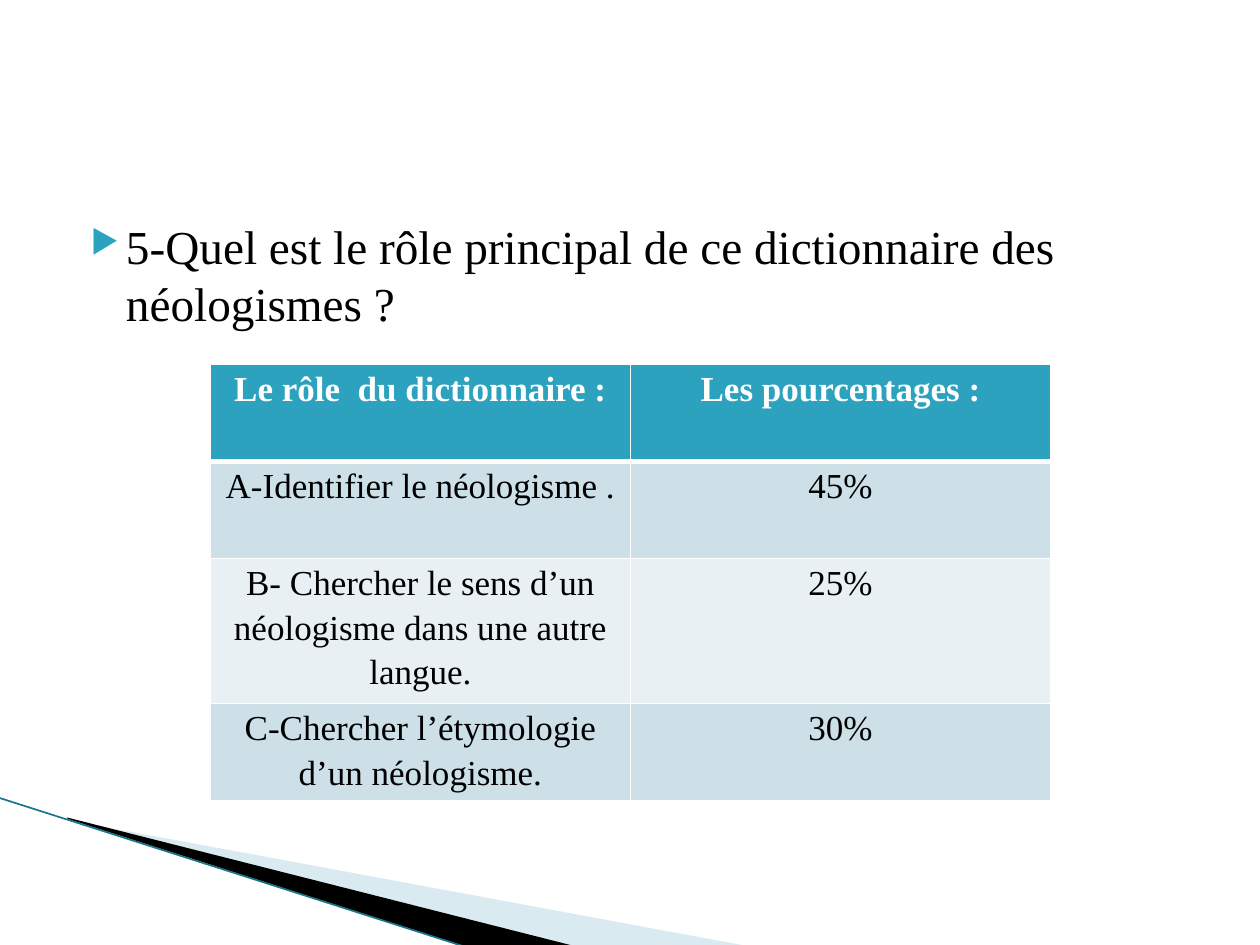
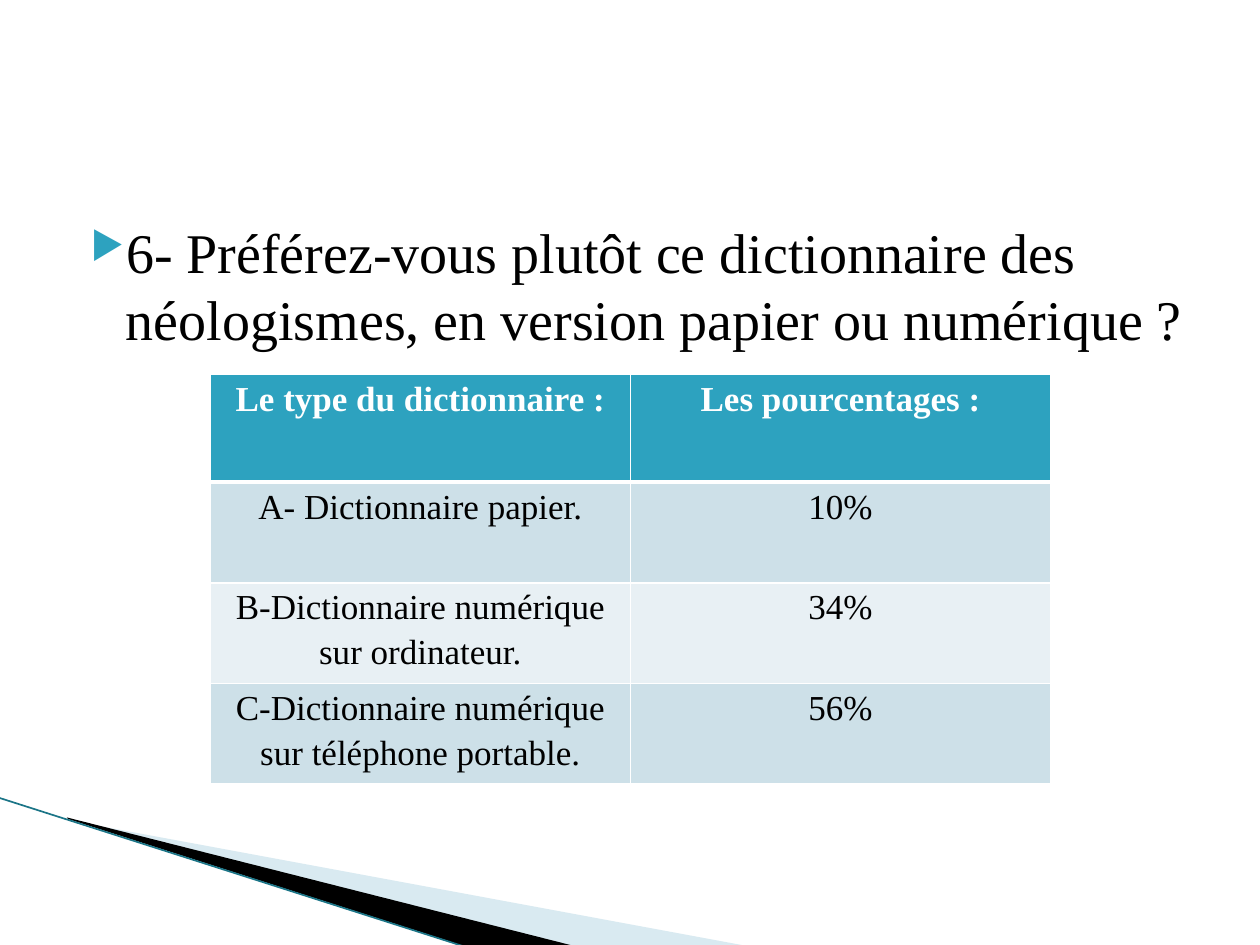
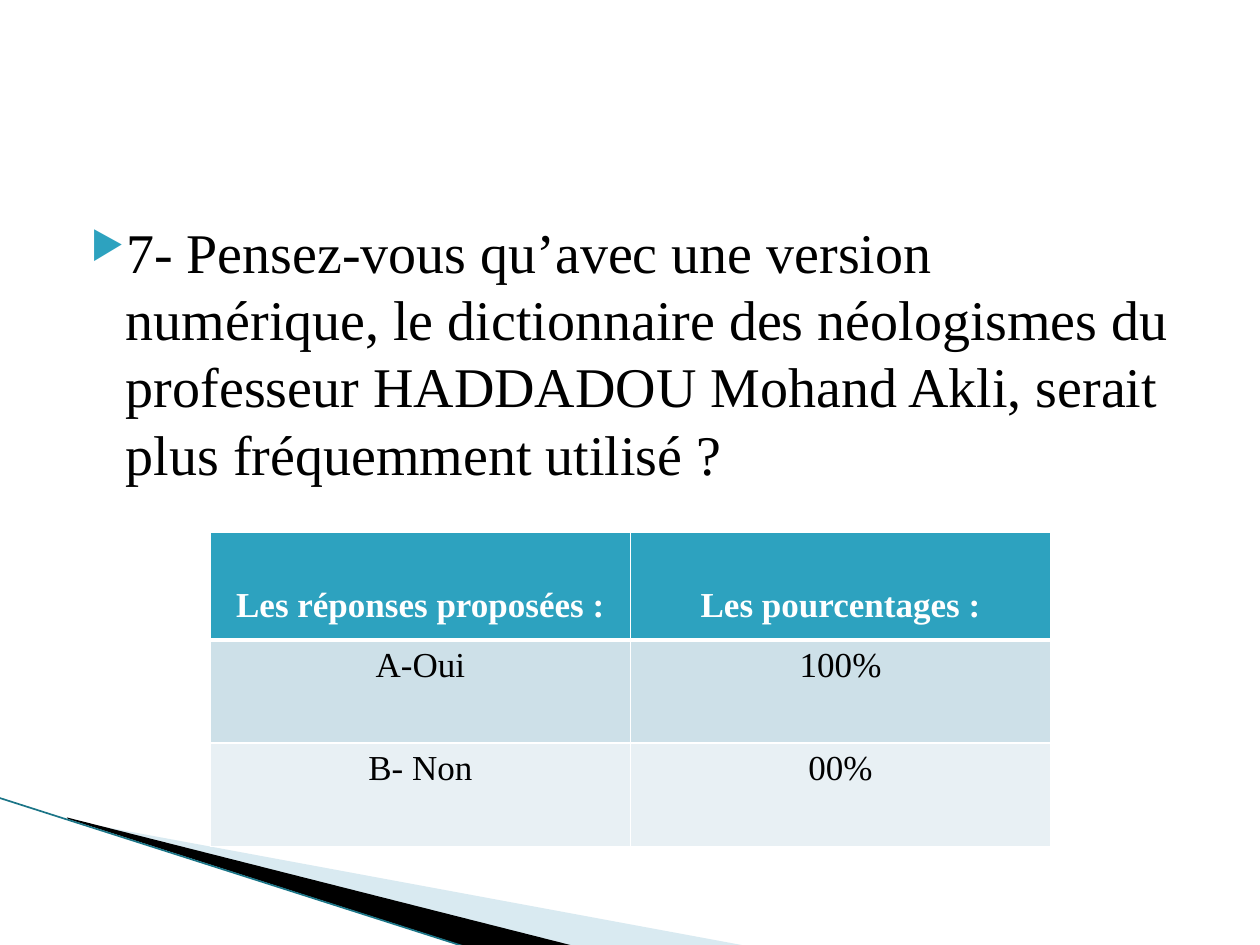
"""Build three survey slides, each with a question and a table of answers."""
import pptx
import pptx.dml.color
import pptx.enum.shapes
import pptx.enum.text
import pptx.oxml
import pptx.oxml.ns
import pptx.util
from lxml import etree

Cm = pptx.util.Cm
Pt = pptx.util.Pt
FONT = "Times New Roman"
COLORS = {
    "text": "000000",
    "white": "FFFFFF",
    "teal": "2DA2BF",
    "edge": "1B7587",
    "pale": "A0CBDC",
    "odd_row": "CDE0E8",
    "even_row": "E8F0F4",
}
BANDS = [
    ("pale", 40, [(1.4, 16.54), (15.11, 19.08), (11.58, 19.08), (1.4, 16.51)]),
    ("text", 100, [(1.35, 16.48), (11.61, 19.08), (9.45, 19.1), (1.37, 16.51)]),
]
SURVEY = [
    {
        "question": "5-Quel est le rôle principal de ce dictionnaire des néologismes ?",
        "size": 27,
        "top": 7.34,
        "heights": (1.96, 1.96),
        "header_at_bottom": False,
        "rows": [
            ("Le rôle  du dictionnaire :", "Les pourcentages :"),
            ("A-Identifier le néologisme .", "45%"),
            ("B- Chercher le sens d’un néologisme dans une autre langue.", "25%"),
            ("C-Chercher l’étymologie d’un néologisme.", "30%"),
        ],
    },
    {
        "question": "6- Préférez-vous plutôt ce dictionnaire des néologismes, "
                    "en version papier ou numérique ?",
        "size": 32,
        "top": 7.54,
        "heights": (2.18, 2.03),
        "header_at_bottom": False,
        "rows": [
            ("Le type du dictionnaire :", "Les pourcentages :"),
            ("A- Dictionnaire papier.", "10%"),
            ("B-Dictionnaire numérique sur ordinateur.", "34%"),
            ("C-Dictionnaire numérique sur téléphone portable.", "56%"),
        ],
    },
    {
        "question": "7- Pensez-vous qu’avec une version numérique, le dictionnaire "
                    "des néologismes du professeur HADDADOU Mohand Akli, serait "
                    "plus fréquemment utilisé ?",
        "size": 32,
        "top": 10.72,
        "heights": (2.18, 2.08),
        "header_at_bottom": True,
        "rows": [
            ("Les réponses proposées :", "Les pourcentages :"),
            ("A-Oui", "100%"),
            ("B- Non", "00%"),
        ],
    },
]


def add_element(parent, tag, **attributes):
    return etree.SubElement(parent, pptx.oxml.ns.qn(tag), attributes)


def style_text(para, size, color, bold=False):
    for span in para.runs:
        span.font.name = FONT
        span.font.size = Pt(size)
        span.font.bold = bold
        span.font.color.rgb = pptx.dml.color.RGBColor.from_string(COLORS[color])


deck = pptx.Presentation()
deck.slide_width = Cm(25.4)
deck.slide_height = Cm(19.05)

for entry in SURVEY:
    page = deck.slides.add_slide(deck.slide_layouts[6])

    for color, opacity, corners in BANDS:
        points = [(Cm(x), Cm(y)) for x, y in corners]
        outline = page.shapes.build_freeform(*points[0])
        outline.add_line_segments(points[1:])
        band = outline.convert_to_shape()
        band.shadow.inherit = False
        band.line.fill.background()
        band.fill.solid()
        band.fill.fore_color.rgb = pptx.dml.color.RGBColor.from_string(COLORS[color])
        if opacity < 100:
            tint = band.fill._xPr.find(".//" + pptx.oxml.ns.qn("a:srgbClr"))
            add_element(tint, "a:alpha", val=str(opacity * 1000))

    edge = page.shapes.add_connector(
        pptx.enum.shapes.MSO_CONNECTOR.STRAIGHT, Cm(-0.03), Cm(16.08), Cm(9.42), Cm(19.1))
    edge.line.width = Pt(0.95)
    edge.line.color.rgb = pptx.dml.color.RGBColor.from_string(COLORS["edge"])
    add_element(edge._element.spPr, "a:effectLst")

    box = page.shapes.add_textbox(Cm(1.27), Cm(4.26), Cm(22.86), Cm(12.43))
    box.text_frame.word_wrap = True
    box.text_frame.text = entry["question"]
    para = box.text_frame.paragraphs[0]
    properties = para._p.get_or_add_pPr()
    properties.set("marL", str(Cm(1.02)))
    properties.set("indent", str(Cm(-0.71)))
    bullet_color = add_element(properties, "a:buClr")
    add_element(bullet_color, "a:srgbClr", val=COLORS["teal"])
    add_element(properties, "a:buSzPct", val="68000")
    add_element(properties, "a:buChar", char="▶")
    style_text(para, entry["size"], "text")

    rows = entry["rows"]
    header_height, row_height = entry["heights"]
    total_height = header_height + row_height * (len(rows) - 1)
    table = page.shapes.add_table(
        len(rows), 2, Cm(4.24), Cm(entry["top"]), Cm(16.94), Cm(total_height)).table
    for row_index, answers in enumerate(rows):
        is_header = row_index == 0
        table.rows[row_index].height = Cm(header_height if is_header else row_height)
        fill = "teal" if is_header else ("even_row", "odd_row")[row_index % 2]
        borders = {
            "a:lnL": 1,
            "a:lnR": 1,
            "a:lnT": 3 if row_index == 1 else 1,
            "a:lnB": 3 if is_header else 1,
        }
        for column_index, answer in enumerate(answers):
            cell = table.cell(row_index, column_index)
            cell.margin_left = cell.margin_right = Cm(0.18)
            cell.margin_top = cell.margin_bottom = 0
            if is_header and entry["header_at_bottom"]:
                cell.vertical_anchor = pptx.enum.text.MSO_ANCHOR.BOTTOM
                cell.margin_bottom = Cm(0.3)
            for tag, width in borders.items():
                border = add_element(cell._tc.get_or_add_tcPr(), tag, w=str(Pt(width)))
                paint = add_element(border, "a:solidFill")
                add_element(paint, "a:srgbClr", val=COLORS["white"])
            cell.fill.solid()
            cell.fill.fore_color.rgb = pptx.dml.color.RGBColor.from_string(COLORS[fill])
            cell.text_frame.text = answer
            para = cell.text_frame.paragraphs[0]
            para.alignment = pptx.enum.text.PP_ALIGN.CENTER
            para.line_spacing = 1.15
            style_text(para, 20, "white" if is_header else "text", is_header)

deck.save("out.pptx")
